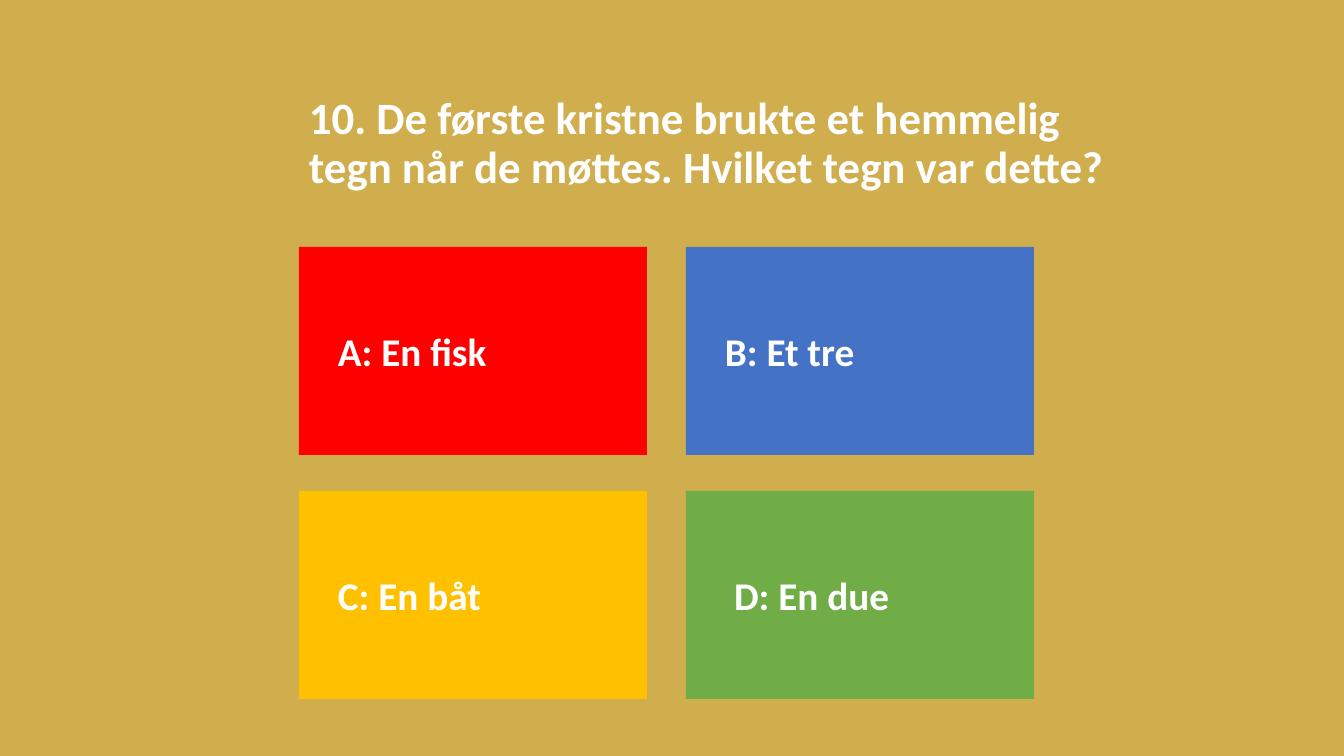
"""Build a quiz slide with one question and four coloured answer cards."""
from pptx import Presentation
from pptx import util as u
from pptx.dml.color import RGBColor
from pptx.enum import shapes, text

PX = 914400 / 100.8
COLOURS = {"background": "D0AE4E", "white": "FFFFFF", "red": "FF0000",
           "blue": "4472C4", "yellow": "FFC000", "green": "70AD47"}


def px(*lengths):
    return [u.Emu(round(length * PX)) for length in lengths]


def write(shape, words, size, anchor, insets, line_spacing):
    frame = shape.text_frame
    left, top, right, bottom = px(*insets)
    frame_format = {"word_wrap": True, "vertical_anchor": anchor,
                    "margin_left": left, "margin_top": top,
                    "margin_right": right, "margin_bottom": bottom}
    for name, value in frame_format.items():
        setattr(frame, name, value)
    para = frame.paragraphs[0]
    para.alignment = text.PP_ALIGN.LEFT
    para.line_spacing = line_spacing
    span = para.add_run()
    span.text = words
    for name, value in {"name": "Calibri", "size": u.Pt(size), "bold": True}.items():
        setattr(span.font, name, value)
    span.font.color.rgb = RGBColor.from_string(COLOURS["white"])


deck = Presentation()
deck.slide_width, deck.slide_height = px(1344, 756)
page = deck.slides.add_slide(deck.slide_layouts[6])
page.background.fill.solid()
page.background.fill.fore_color.rgb = RGBColor.from_string(COLOURS["background"])

question = page.shapes.add_textbox(*px(299, 126, 864, 121))
write(question, "10. De første kristne brukte et hemmelig tegn når de møttes. "
      "Hvilket tegn var dette?", 32, text.MSO_ANCHOR.BOTTOM, (10, 5, 10, 54), 0.9)

answers = [("A: En fisk", "red", 39), ("B: Et tre", "blue", 39),
           ("C: En båt", "yellow", 39), ("D: En due", "green", 48)]
for index, (answer, colour, indent) in enumerate(answers):
    row, column = divmod(index, 2)
    card = page.shapes.add_shape(shapes.MSO_SHAPE.RECTANGLE,
                                 *px(299 + 387 * column, 247 + 244 * row, 348, 208))
    card.shadow.inherit = False
    card.fill.solid()
    card.fill.fore_color.rgb = RGBColor.from_string(COLOURS[colour])
    card.line.fill.background()
    write(card, answer, 28, text.MSO_ANCHOR.MIDDLE, (indent, 20, 20, 20), 1.0)

deck.save("out.pptx")
